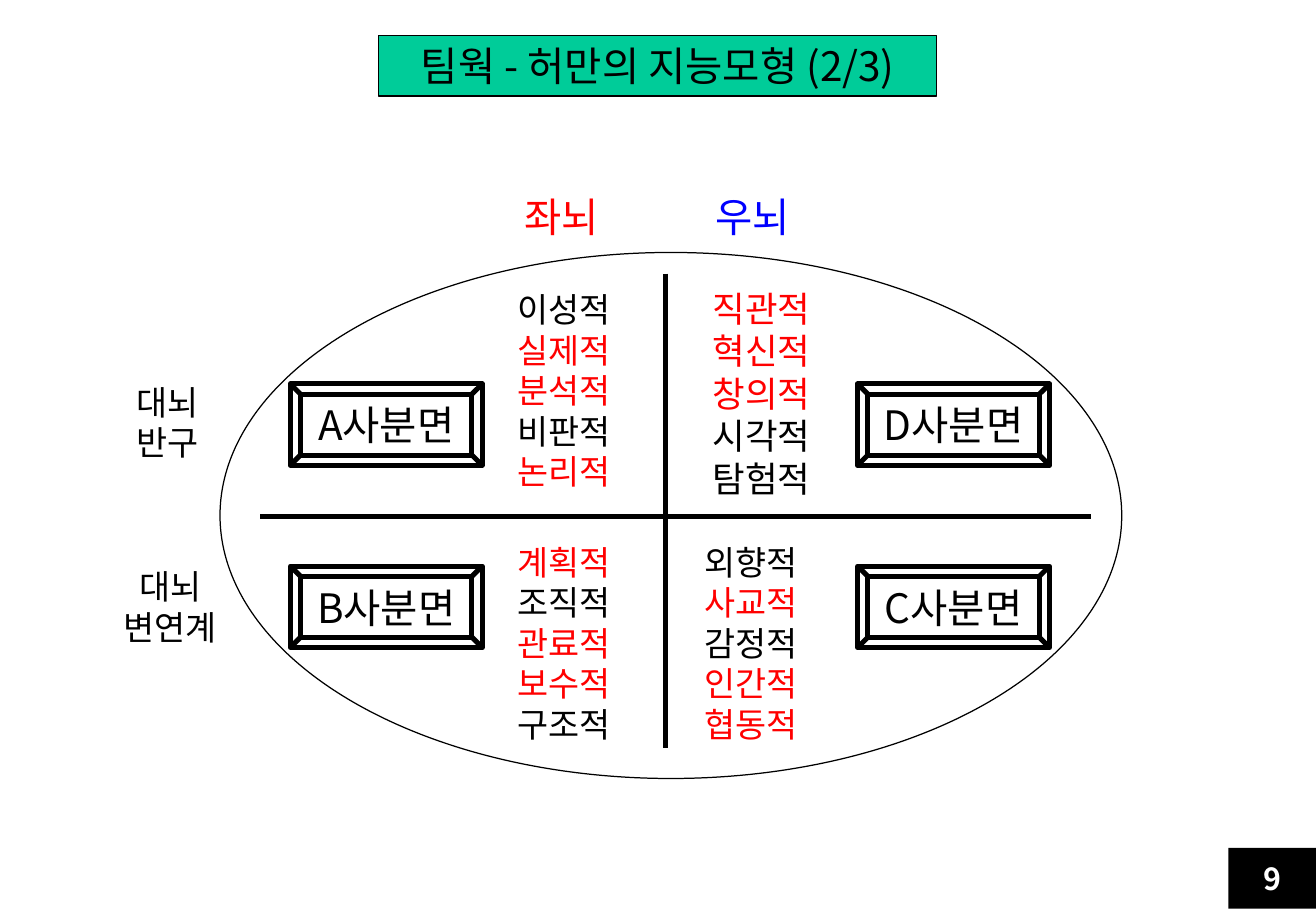
from dataclasses import dataclass

from lxml import etree
from pptx import Presentation
from pptx.dml.color import RGBColor
from pptx.enum.shapes import MSO_CONNECTOR, MSO_SHAPE
from pptx.enum.text import MSO_ANCHOR, PP_ALIGN
from pptx.oxml.ns import qn
from pptx.util import Cm, Pt

STRAIGHT = MSO_CONNECTOR.STRAIGHT
RECTANGLE, OVAL, BEVEL = MSO_SHAPE.RECTANGLE, MSO_SHAPE.OVAL, MSO_SHAPE.BEVEL
LEFT, CENTER = PP_ALIGN.LEFT, PP_ALIGN.CENTER
TOP, MIDDLE = MSO_ANCHOR.TOP, MSO_ANCHOR.MIDDLE


@dataclass(frozen=True)
class Theme:
    font: str = "Noto Sans CJK KR"
    black: RGBColor = RGBColor(0x00, 0x00, 0x00)
    white: RGBColor = RGBColor(0xFF, 0xFF, 0xFF)
    red: RGBColor = RGBColor(0xFF, 0x00, 0x00)
    blue: RGBColor = RGBColor(0x00, 0x00, 0xFF)
    green: RGBColor = RGBColor(0x00, 0xCC, 0x99)
    heading: int = 24
    right_words: int = 21
    body: int = 20
    number: int = 18
    leading: float = 1.2
    thin: float = 0.75
    thick: float = 3


theme = Theme()


def write(box, paragraphs, size, align=CENTER, anchor=TOP, wrap=True, bold=False):
    """Fill a shape with paragraphs, each a list of (text, colour) runs."""
    frame = box.text_frame
    frame.word_wrap = wrap
    frame.vertical_anchor = anchor
    for index, runs in enumerate(paragraphs):
        para = frame.add_paragraph() if index else frame.paragraphs[0]
        para.alignment = align
        para.line_spacing = Pt(size * theme.leading)
        for text, colour in runs:
            span = para.add_run()
            span.text = text
            span.font.size = Pt(size)
            span.font.bold = bold
            span.font.color.rgb = colour
            span.font.name = theme.font
            east_asian = etree.SubElement(span._r.get_or_add_rPr(), qn("a:ea"))
            east_asian.set("typeface", theme.font)


def add_figure(shapes, kind, place, fill=None, line_width=None):
    figure = shapes.add_shape(kind, *map(Cm, place))
    figure.shadow.inherit = False
    if fill is None:
        figure.fill.background()
    else:
        figure.fill.solid()
        figure.fill.fore_color.rgb = fill
    if line_width is None:
        figure.line.fill.background()
    else:
        figure.line.color.rgb = theme.black
        figure.line.width = Pt(line_width)
    return figure


deck = Presentation()
deck.slide_width, deck.slide_height = Cm(27.51), Cm(19.05)
page = deck.slides.add_slide(deck.slide_layouts[6])

# Title and page number
title = add_figure(page.shapes, RECTANGLE, (7.92, 0.74, 11.66, 1.27), theme.green, theme.thin)
write(title, [[("팀웍 - 허만의 지능모형 (2/3)", theme.black)]], theme.heading,
      anchor=MIDDLE, wrap=False)
number = add_figure(page.shapes, RECTANGLE, (25.68, 17.73, 1.83, 1.27), theme.black)
write(number, [[("9", theme.white)]], theme.number, anchor=MIDDLE, bold=True)

# Brain outline and its two axes
diagram = page.shapes.add_group_shape().shapes
add_figure(diagram, OVAL, (4.6, 5.28, 18.85, 11), line_width=theme.thin)
for ends in ((5.44, 10.8, 22.81, 10.8), (13.92, 5.72, 13.92, 15.65)):
    axis = diagram.add_connector(STRAIGHT, *map(Cm, ends))
    axis.line.color.rgb = theme.black
    axis.line.width = Pt(theme.thick)
    etree.SubElement(axis._element.spPr, qn("a:effectLst"))

# Traits of each quadrant: one word to a line, wrapped by the box width
traits = [
    ((10.31, 5.92, 2.97, 4.5), theme.body,
     [("이성적 ", theme.black), ("실제적 분석적 ", theme.red),
      ("비판적 ", theme.black), ("논리적", theme.red)]),
    ((14.33, 5.87, 3.18, 4.7), theme.right_words,
     [("직관적 혁신적 창의적 ", theme.red), ("시각적 탐험적", theme.black)]),
    ((10.31, 11.2, 2.97, 4.5), theme.body,
     [("계획적 ", theme.red), ("조직적 ", theme.black),
      ("관료적 보수적 ", theme.red), ("구조적", theme.black)]),
    ((14.12, 11.2, 3.18, 4.5), theme.body,
     [("외향적 ", theme.black), ("사교적 ", theme.red),
      ("감정적 ", theme.black), ("인간적 협동적", theme.red)]),
]
for place, size, runs in traits:
    write(diagram.add_textbox(*map(Cm, place)), [runs], size)

# Quadrant plates
for top, letters in ((8.03, "AD"), (11.84, "BC")):
    for left, letter in zip((6.07, 17.93), letters):
        plate = add_figure(diagram, BEVEL, (left, top, 4.01, 1.7), line_width=theme.thick)
        plate.adjustments[0] = 0.125
        write(plate, [[(f"{letter}사분면", theme.black)]], theme.heading,
              anchor=MIDDLE, wrap=False)

# Column headings and row labels
for left, side, colour in ((10.72, "좌뇌", theme.red), (14.71, "우뇌", theme.blue)):
    heading = page.shapes.add_textbox(Cm(left), Cm(3.89), Cm(2.34), Cm(1.27))
    write(heading, [[(side, colour)]], theme.heading, align=LEFT)

for place, part in (((1.7, 7.85, 3.61, 1.96), "반구"), ((0.97, 11.71, 5.18, 1.96), "변연계")):
    label = page.shapes.add_textbox(*map(Cm, place))
    write(label, [[("대뇌", theme.black)], [(part, theme.black)]], theme.body)

deck.save("out.pptx")
